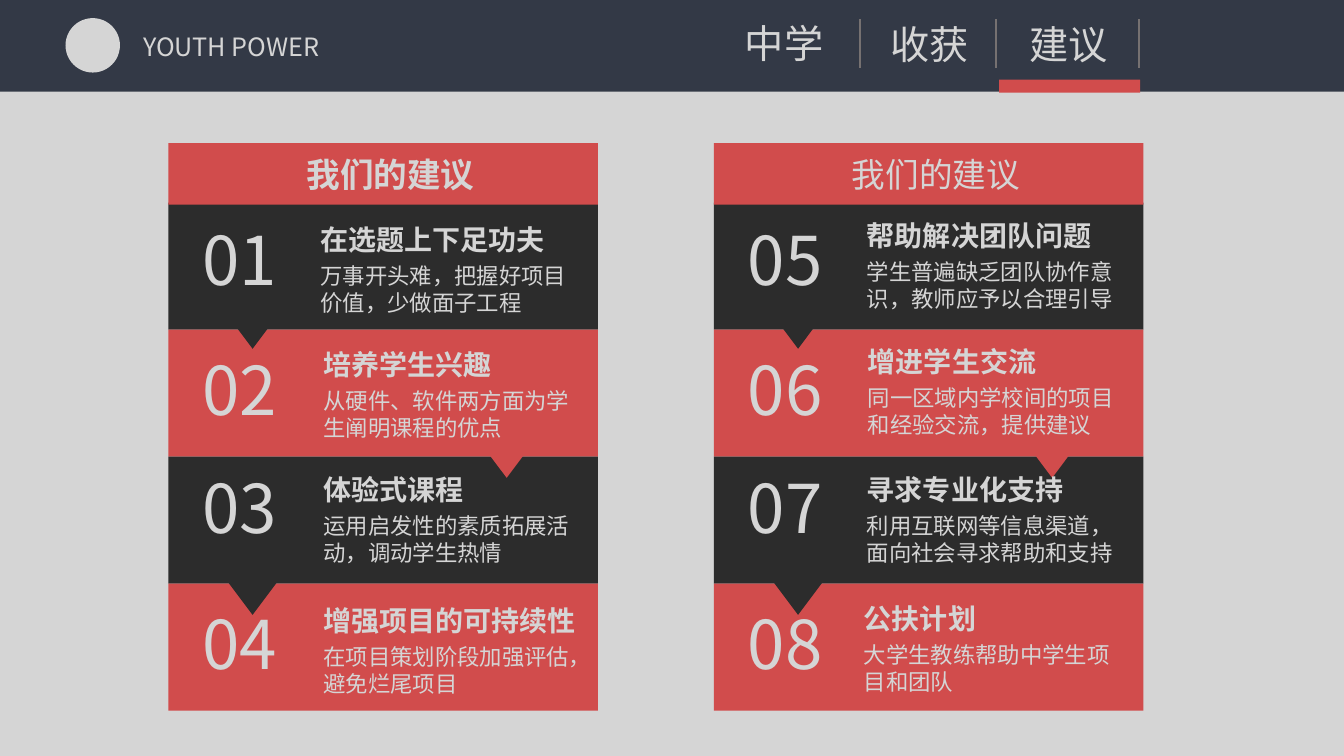
from dataclasses import dataclass

from lxml import etree
from pptx import Presentation
from pptx import util as u
from pptx.dml.color import RGBColor
from pptx.enum import shapes, text
from pptx.oxml.ns import qn

PX = 9144  # 100 px to the inch


@dataclass(frozen=True)
class Theme:
    pale: str = "D5D5D5"
    red: str = "D14C4C"
    dark: str = "2C2C2C"
    navy: str = "333946"
    gray: str = "767171"
    sans: str = "Noto Sans CJK TC"
    plain: str = "Calibri"
    brand: int = 18
    tab: int = 28
    title: int = 24
    number: int = 48
    head: int = 20
    body: int = 16


T = Theme()
KIND = shapes.MSO_SHAPE

# Each row: number, its drop, head offset from the row, head, body
LEFT = [
    ("01", 11, (141, 15), "在选题上下足功夫", "万事开头难，把握好项目价值，少做面子工程"),
    ("02", 14, (144, 13), "培养学生兴趣", "从硬件、软件两方面为学生阐明课程的优点"),
    ("03", 5, (144, 11), "体验式课程", "运用启发性的素质拓展活动，调动学生热情"),
    ("04", 14, (144, 15), "增强项目的可持续性", "在项目策划阶段加强评估，避免烂尾项目"),
]
RIGHT = [
    ("05", 11, (142, 11), "帮助解决团队问题", "学生普遍缺乏团队协作意识，教师应予以合理引导"),
    ("06", 14, (143, 10), "增进学生交流", "同一区域内学校间的项目和经验交流，提供建议"),
    ("07", 5, (142, 11), "寻求专业化支持", "利用互联网等信息渠道，面向社会寻求帮助和支持"),
    ("08", 14, (139, 13), "公扶计划", "大学生教练帮助中学生项目和团队"),
]
# Each pointer: left offset, lift above the row's bottom edge
POINTS = [(58, 15), (310, 13), (58, 3)]


def emu(*px):
    return [u.Emu(n * PX) for n in px]


def block(slide, kind, box, color):
    shape = slide.shapes.add_shape(kind, *emu(*box))
    shape.shadow.inherit = False
    shape.fill.solid()
    shape.fill.fore_color.rgb = RGBColor.from_string(color)
    shape.line.fill.background()
    return shape


def style(shape, words, size, font=T.sans, bold=False):
    frame = shape.text_frame
    frame.text = words
    frame.word_wrap = True
    frame.auto_size = text.MSO_AUTO_SIZE.SHAPE_TO_FIT_TEXT
    frame.vertical_anchor = text.MSO_ANCHOR.TOP
    para = frame.paragraphs[0]
    para.alignment = text.PP_ALIGN.LEFT
    run = para.runs[0]
    run.font.size = u.Pt(size)
    run.font.bold = bold
    run.font.color.rgb = RGBColor.from_string(T.pale)
    run.font.name = font
    # East Asian glyphs take the same font
    latin = run.font._element.find(qn("a:latin"))
    east = etree.Element(qn("a:ea"), typeface=font)
    latin.addnext(east)


def label(slide, box, words, size, font=T.sans, bold=False):
    style(slide.shapes.add_textbox(*emu(*box)), words, size, font, bold)


def rule(slide, x, top, end):
    line = slide.shapes.add_connector(
        shapes.MSO_CONNECTOR.STRAIGHT, *emu(x, top, x, end))
    line.line.color.rgb = RGBColor.from_string(T.gray)
    line.line.width = u.Pt(1.5)
    etree.SubElement(line._element.spPr, qn("a:effectLst"))


def header(slide, box):
    x, y, w, h = box
    block(slide, KIND.RECTANGLE, box, T.navy)
    # Brand mark and name
    block(slide, KIND.OVAL, (x + 65, y + 18, 54, 54), T.pale)
    label(slide, (x + 132, y + 26, 225, 40), "YOUTH POWER", T.brand)
    # Tabs, each closed by a rule
    tabs = [("中学", 729, 14, 853), ("收获", 873, 15, 988), ("建议", 1011, 15, 1130)]
    for name, left, drop, end in tabs:
        label(slide, (x + left, y + drop, 110, 57), name, T.tab)
        rule(slide, x + end, y + 19, y + 67)
    # Marker under the active tab
    block(slide, KIND.RECTANGLE, (x + 991, y + h - 12, 140, 13), T.red)


def panel(slide, box, rows, title=None):
    x, y, w, h = box
    bar = 59
    step = (h - bar) // len(rows)
    tops = [y + bar + step * i for i in range(len(rows))]
    tints = [(T.dark, T.red)[i % 2] for i in range(len(rows))]
    # Bands, then pointers over them
    for top, tint in zip(tops, tints):
        block(slide, KIND.RECTANGLE, (x, top, w, step), tint)
    for (left, lift), top, tint in zip(POINTS, tops, tints):
        tip = block(slide, KIND.ISOSCELES_TRIANGLE,
                    (x + left, top + step - lift, 51, 34), tint)
        tip.rotation = 180
    # Title bar
    block(slide, KIND.RECTANGLE, (x, y, w, bar + 2), T.red)
    spot = (x + 127, y + 6, 265, 50)
    if title is None:
        label(slide, spot, "我们的建议", T.title)
    else:
        title.left, title.top, title.width, title.height = emu(*spot)
        style(title, "我们的建议", T.title, bold=True)
        slide.shapes._spTree.append(title._element)  # bring to front
    # Row text
    for (num, drop, (dx, dy), head, body), top in zip(rows, tops):
        label(slide, (x + 24, top + drop, 110, 91), num, T.number)
        label(slide, (x + dx, top + dy, 290, 44), head, T.head, bold=True)
        label(slide, (x + dx, top + dy + 39, 282, 64), body, T.body, T.plain)


def main():
    prs = Presentation()
    prs.slide_width, prs.slide_height = emu(1333, 750)
    slide = prs.slides.add_slide(prs.slide_layouts[5])
    slide.background.fill.solid()
    slide.background.fill.fore_color.rgb = RGBColor.from_string(T.pale)
    header(slide, (0, 0, 1334, 91))
    panel(slide, (167, 142, 426, 563), LEFT, slide.shapes.title)
    panel(slide, (708, 142, 426, 563), RIGHT)
    prs.save("out.pptx")


if __name__ == "__main__":
    main()
